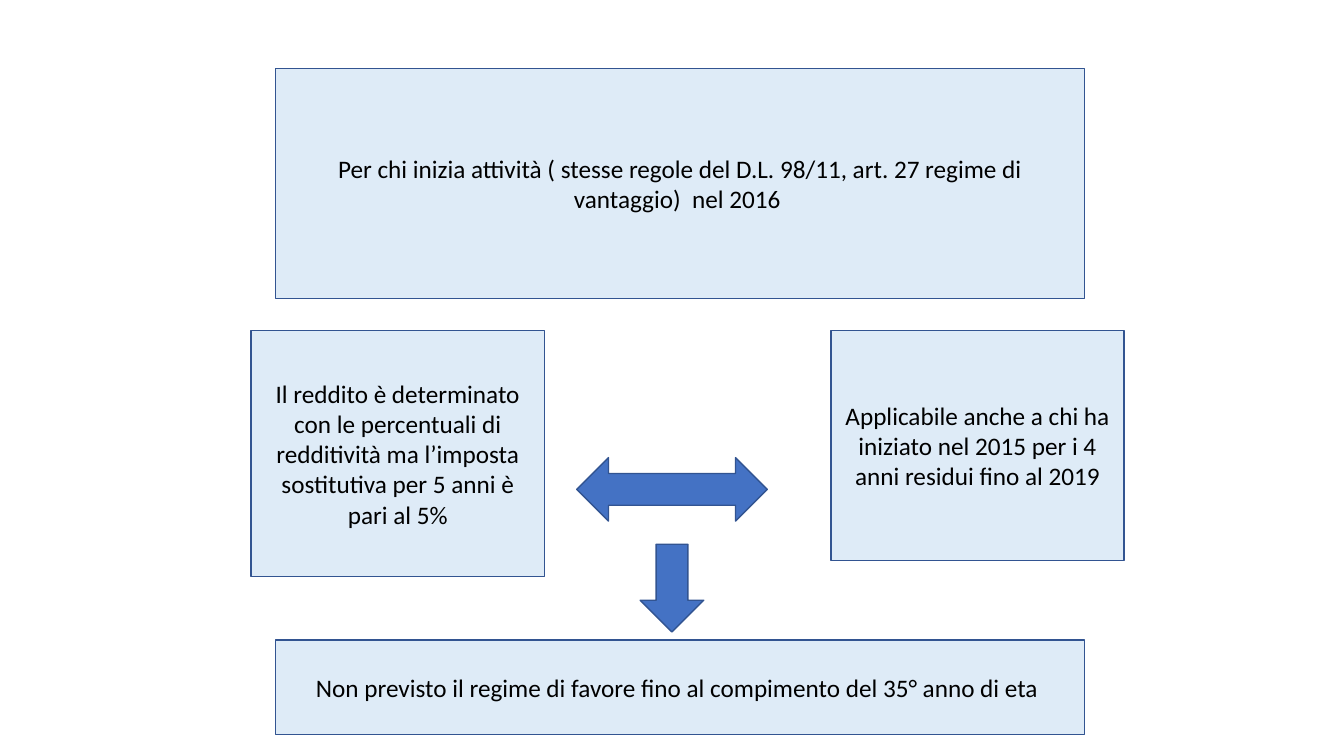
import pptx
import pptx.util
import pptx.dml.color
import pptx.enum.shapes
import pptx.enum.text

Inch = pptx.util.Inches
Kind = pptx.enum.shapes.MSO_SHAPE
hues = {"box": "DEEBF7", "arrow": "4472C4", "edge": "325491", "text": "000000"}


def tone(name):
    return pptx.dml.color.RGBColor.from_string(hues[name])


deck = pptx.Presentation()
deck.slide_width, deck.slide_height = Inch(13.33), Inch(7.5)
slide = deck.slides.add_slide(deck.slide_layouts[6])

# Shared columns and rows, in inches
wide = {"left": 2.73, "width": 8.03}
side = {"top": 3.28, "width": 2.91}
thick = 0.63

# Parts from back to front: kind, fill, place, text
parts = [
    (Kind.RECTANGLE, "box", {**wide, "top": 0.68, "height": 2.28},
     "Per chi inizia attività ( stesse regole del D.L. 98/11, art. 27 regime di vantaggio)  nel 2016 "),
    (Kind.LEFT_RIGHT_ARROW, "arrow",
     {"left": 5.72, "top": 4.54, "width": 3 * thick, "height": thick}, ""),
    (Kind.RECTANGLE, "box", {**side, "left": 2.49, "height": 2.44},
     "Il reddito è determinato con le percentuali di redditività ma l’imposta sostitutiva per 5 anni è pari al 5%"),
    (Kind.RECTANGLE, "box", {**side, "left": 8.24, "height": 2.28},
     "Applicabile anche a chi ha iniziato nel 2015 per i 4 anni residui fino al 2019"),
    (Kind.DOWN_ARROW, "arrow",
     {"left": 5.72 + thick, "top": 5.4, "width": thick, "height": 0.87}, ""),
    (Kind.RECTANGLE, "box", {**wide, "top": 6.35, "height": 0.94},
     "Non previsto il regime di favore fino al compimento del 35° anno di eta "),
]
font = {"name": "Calibri", "size": pptx.util.Pt(18)}

for kind, fill, place, text in parts:
    # Outline and fill
    shape = slide.shapes.add_shape(
        kind, *(Inch(place[key]) for key in ("left", "top", "width", "height")))
    shape.shadow.inherit = False
    shape.fill.solid()
    shape.fill.fore_color.rgb = tone(fill)
    shape.line.color.rgb = tone("edge")
    shape.line.width = pptx.util.Pt(1)

    # Centred text
    if text:
        frame = shape.text_frame
        frame.word_wrap = True
        frame.vertical_anchor = pptx.enum.text.MSO_ANCHOR.MIDDLE
        para = frame.paragraphs[0]
        para.alignment = pptx.enum.text.PP_ALIGN.CENTER
        run = para.add_run()
        run.text = text
        for key, value in font.items():
            setattr(run.font, key, value)
        run.font.color.rgb = tone("text")

deck.save("out.pptx")
